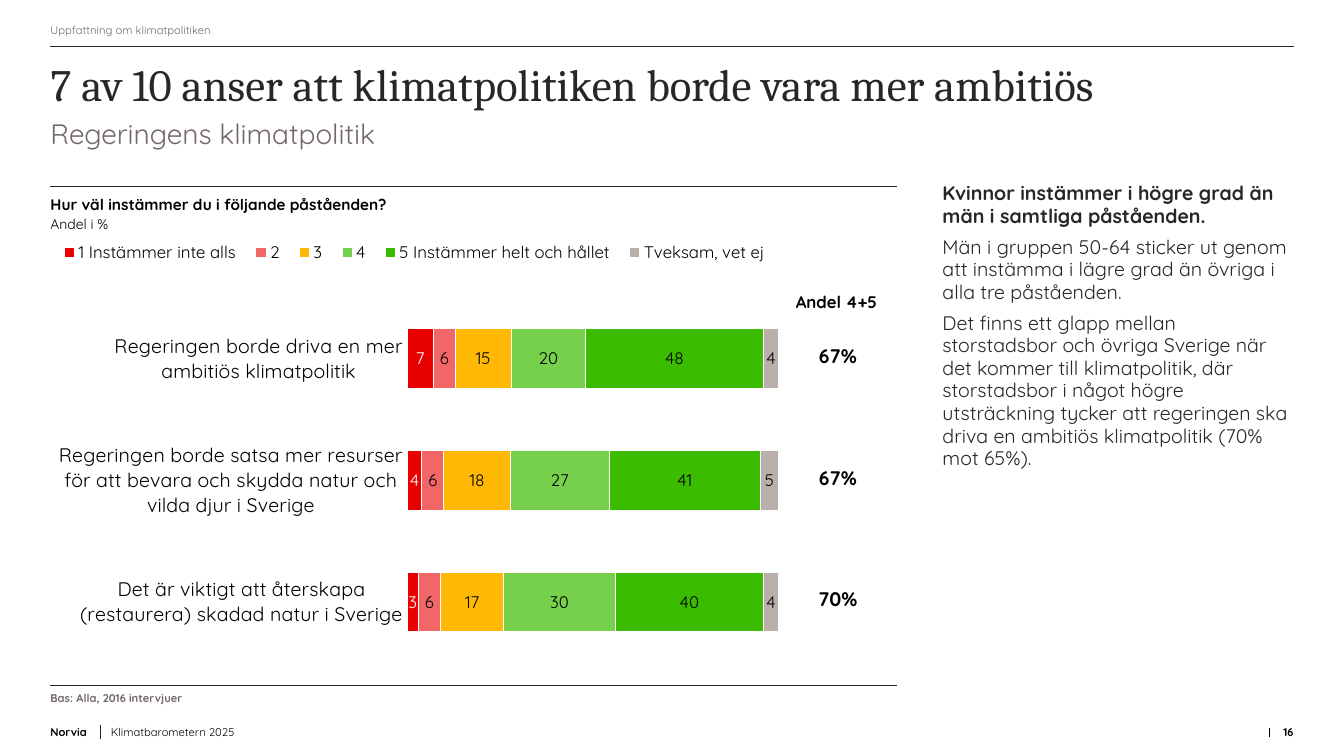
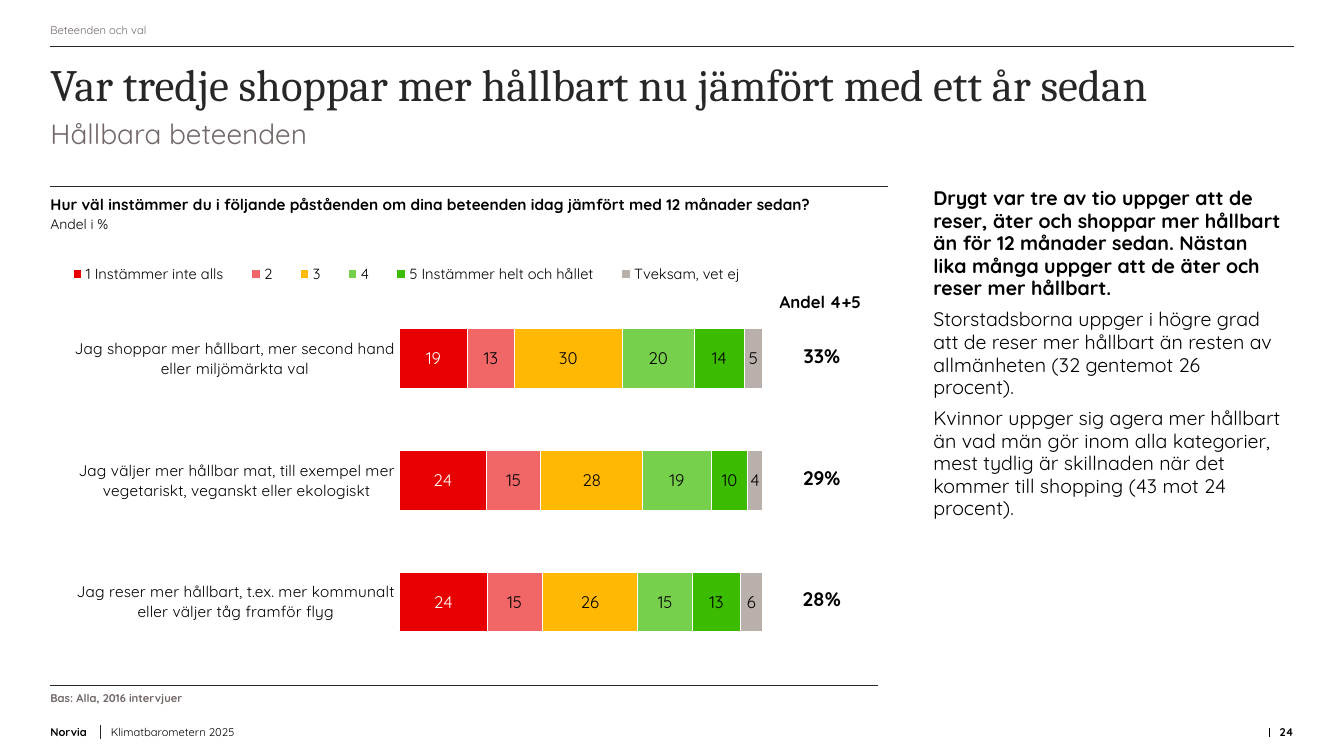
from lxml.etree import SubElement
from pptx import Presentation
from pptx.chart.data import CategoryChartData
from pptx.dml.color import RGBColor
from pptx.enum.chart import XL_CHART_TYPE, XL_LEGEND_POSITION, XL_TICK_MARK
from pptx.enum.shapes import MSO_CONNECTOR
from pptx.enum.text import MSO_ANCHOR, MSO_AUTO_SIZE, PP_ALIGN
from pptx.oxml.ns import qn
from pptx.util import Pt

BLACK = RGBColor(0x00, 0x00, 0x00)
WHITE = RGBColor(0xFF, 0xFF, 0xFF)
CHARCOAL = RGBColor(0x28, 0x26, 0x26)
GREY = RGBColor(0x73, 0x68, 0x68)
RED = RGBColor(0xE8, 0x00, 0x00)
PINK = RGBColor(0xF1, 0x66, 0x66)
YELLOW = RGBColor(0xFF, 0xB9, 0x05)
LIGHT_GREEN = RGBColor(0x76, 0xD0, 0x4C)
GREEN = RGBColor(0x3C, 0xBC, 0x00)
STONE = RGBColor(0xBA, 0xB0, 0xAB)

TITLE_FONT = "Cambria"
TEXT_FONT = "Quicksand"
NUMBER_FORMAT = "0"

# Answer name, bar colour, label colour
ANSWERS = [
    ("1 Instämmer inte alls", RED, WHITE),
    ("2", PINK, BLACK),
    ("3", YELLOW, BLACK),
    ("4", LIGHT_GREEN, BLACK),
    ("5 Instämmer helt och hållet", GREEN, BLACK),
    ("Tveksam, vet ej", STONE, BLACK),
]

LEFT = 36
RIGHT = 924
CONTENT_WIDTH = RIGHT - LEFT
CHART_TOP = 167.8
CHART_HEIGHT = 310.3
SHARE_TOP = 245.5
SHARE_STEP = 87
SHARE_WIDTH = 82


def style_font(font, size, color, bold=False, name=TEXT_FONT):
    font.name = name
    font.size = Pt(size)
    font.bold = bold
    font.color.rgb = color


def set_layout(element, index, **fractions):
    """Place a chart part by fractions of the chart area."""
    for old_layout in element.findall(qn("c:layout")):
        element.remove(old_layout)
    layout = element.makeelement(qn("c:layout"))
    element.insert(index, layout)
    manual = SubElement(layout, qn("c:manualLayout"))
    if element.tag == qn("c:plotArea"):
        SubElement(manual, qn("c:layoutTarget")).set("val", "inner")
    for axis in "xy":
        SubElement(manual, qn(f"c:{axis}Mode")).set("val", "edge")
    for key in "xywh":
        SubElement(manual, qn(f"c:{key}")).set("val", str(fractions[key]))


class SurveyDeck:
    def __init__(self):
        self.presentation = Presentation()
        self.presentation.slide_width = Pt(960)
        self.presentation.slide_height = Pt(540)
        self.slide = None

    def add_slide(self, section, title, subtitle, page):
        """Start a slide with its heading, rules and footer."""
        layout = self.presentation.slide_layouts[3]
        self.slide = self.presentation.slides.add_slide(layout)
        self.add_line(LEFT, 33.1, RIGHT, 33.1)
        self.add_line(72, 517.7, 72, 527.8)
        self.add_line(906.5, 519.8, 906.5, 526.3, BLACK)
        self.add_text([section], LEFT, 13.7, CONTENT_WIDTH, 15, 8, GREY,
                      anchor=MSO_ANCHOR.MIDDLE)
        footer = {"size": 8, "anchor": MSO_ANCHOR.BOTTOM}
        self.add_text(["Norvia"], LEFT, 515.5, 36, 12.2, bold=True, **footer)
        self.add_text(["Klimatbarometern 2025"], 79.2, 515.5, 560, 12.2, **footer)
        self.add_text([page], 906.5, 515.5, 17.5, 12.2, bold=True,
                      align=PP_ALIGN.RIGHT, **footer)
        self.fill_placeholder(0, [title], LEFT, 33.1, CONTENT_WIDTH, 51, 32,
                              CHARCOAL, name=TITLE_FONT, top_inset=7.2)
        self.fill_placeholder(1, [subtitle], LEFT, 83.5, CONTENT_WIDTH, 33, 20, GREY)

    def add_line(self, x1, y1, x2, y2, color=CHARCOAL):
        line = self.slide.shapes.add_connector(
            MSO_CONNECTOR.STRAIGHT, Pt(x1), Pt(y1), Pt(x2), Pt(y2))
        line.line.color.rgb = color
        line.line.width = Pt(0.5)
        SubElement(line._element.spPr, qn("a:effectLst"))

    def add_text(self, texts, left, top, width, height, size, color=BLACK, **style):
        shape = self.slide.shapes.add_textbox(Pt(left), Pt(top), Pt(width), Pt(height))
        self.set_text(shape, texts, size, color, **style)

    def fill_placeholder(self, index, texts, left, top, width, height, size, color,
                         **style):
        shape = self.slide.placeholders[index]
        shape.left, shape.top = Pt(left), Pt(top)
        shape.width, shape.height = Pt(width), Pt(height)
        self.set_text(shape, texts, size, color, **style)
        for paragraph in shape.text_frame.paragraphs:
            properties = paragraph._p.get_or_add_pPr()
            properties.set("marL", "0")
            properties.set("indent", "0")
            SubElement(properties, qn("a:buNone"))

    def set_text(self, shape, texts, size, color, bold=False, name=TEXT_FONT,
                 align=PP_ALIGN.LEFT, anchor=MSO_ANCHOR.TOP, top_inset=0,
                 space_after=0, line_spacing=1.0):
        frame = shape.text_frame
        frame.text = "\n".join(texts)
        frame.word_wrap = True
        frame.auto_size = MSO_AUTO_SIZE.NONE
        frame.vertical_anchor = anchor
        frame.margin_left = frame.margin_right = frame.margin_bottom = 0
        frame.margin_top = Pt(top_inset)
        for paragraph in frame.paragraphs:
            paragraph.alignment = align
            paragraph.space_before = Pt(0)
            paragraph.space_after = Pt(space_after)
            paragraph.line_spacing = line_spacing
            style_font(paragraph.font, size, color, bold, name)

    def add_commentary(self, texts, left, top, width, color):
        """Fill the side column; its first paragraph is bold."""
        self.fill_placeholder(2, texts, left, top, width, 370, 14, color,
                              space_after=6, line_spacing=0.96)
        self.slide.placeholders[2].text_frame.paragraphs[0].font.bold = True

    def add_question(self, question, top_rule_end, bottom_rule_end):
        """Frame the chart with rules, its question and the base."""
        self.add_line(LEFT, 133.2, top_rule_end, 133.2)
        self.add_line(LEFT, 489.6, bottom_rule_end, 489.6)
        self.add_text([question], LEFT, 139, 567, 15, 11, bold=True)
        self.add_text(["Andel i %"], LEFT, 154.1, 373, 11, 10)
        self.add_text(["Bas: Alla, 2016 intervjuer"], LEFT, 493.9, 586, 11, 8,
                      GREY, bold=True)

    def add_answer_chart(self, statements, width, plot_left, category_size,
                         legend_size, legend_top):
        """Draw answers per statement; statements maps text to (values, share)."""
        data = CategoryChartData(number_format=NUMBER_FORMAT)
        data.categories = list(statements)
        rows = [values for values, _ in statements.values()]
        for (answer, _, _), values in zip(ANSWERS, zip(*rows)):
            data.add_series(answer, values)
        chart = self.slide.shapes.add_chart(
            XL_CHART_TYPE.BAR_STACKED_100, Pt(LEFT), Pt(CHART_TOP),
            Pt(width), Pt(CHART_HEIGHT), data).chart
        style_font(chart.font, 10, BLACK)
        chart.has_title = False

        chart.has_legend = True
        legend = chart.legend
        legend.position = XL_LEGEND_POSITION.TOP
        legend.include_in_layout = False
        style_font(legend.font, legend_size, BLACK)
        set_layout(legend._element, 1, x=0, y=legend_top, w=1, h=0.08)
        plot_area = chart._chartSpace.chart.plotArea
        set_layout(plot_area, 0, x=plot_left, y=0.145,
                   w=round(1 - plot_left, 2), h=0.84)

        category_axis = chart.category_axis
        category_axis.reverse_order = True
        category_axis.major_tick_mark = XL_TICK_MARK.NONE
        category_axis.format.line.fill.background()
        style_font(category_axis.tick_labels.font, category_size, BLACK)
        chart.value_axis.has_major_gridlines = False
        chart.value_axis.visible = False

        plot = chart.plots[0]
        plot.gap_width = 104
        plot.overlap = 100
        plot.vary_by_categories = False
        for series, (_, bar_color, label_color) in zip(plot.series, ANSWERS):
            series.invert_if_negative = False
            series.format.fill.solid()
            series.format.fill.fore_color.rgb = bar_color
            series.format.line.color.rgb = WHITE
            series.format.line.width = Pt(0.75)
            labels = series.data_labels
            labels.show_value = True
            labels.number_format = NUMBER_FORMAT
            labels.number_format_is_linked = False
            style_font(labels.font, 12, label_color)
        self.add_shares([share for _, share in statements.values()], LEFT + width)

    def add_shares(self, shares, left):
        """Put the sum of answers 4 and 5 beside each bar."""
        style = {"bold": True, "align": PP_ALIGN.CENTER}
        self.add_text(["Andel 4+5"], left, 208.7, SHARE_WIDTH, 18, 12, **style)
        for row, share in enumerate(shares):
            self.add_text([share], left + 1, SHARE_TOP + row * SHARE_STEP,
                          SHARE_WIDTH, 33, 14, **style)


def main():
    deck = SurveyDeck()

    deck.add_slide("Uppfattning om klimatpolitiken",
                   "7 av 10 anser att klimatpolitiken borde vara mer ambitiös",
                   "Regeringens klimatpolitik", "16")
    deck.add_question("Hur väl instämmer du i följande påståenden?", 641, 641)
    deck.add_answer_chart({
        "Regeringen borde driva en mer ambitiös klimatpolitik":
            ((7, 6, 15, 20, 48, 4), "67%"),
        "Regeringen borde satsa mer resurser för att bevara och skydda natur "
        "och vilda djur i Sverige":
            ((4, 6, 18, 27, 41, 5), "67%"),
        "Det är viktigt att återskapa (restaurera) skadad natur i Sverige":
            ((3, 6, 17, 30, 40, 4), "70%"),
    }, width=520.5, plot_left=0.49, category_size=14, legend_size=12, legend_top=0)
    deck.add_commentary([
        "Kvinnor instämmer i högre grad än män i samtliga påståenden.",
        "Män i gruppen 50-64 sticker ut genom att instämma i lägre grad än "
        "övriga i alla tre påståenden.",
        "Det finns ett glapp mellan storstadsbor och övriga Sverige när det "
        "kommer till klimatpolitik, där storstadsbor i något högre utsträckning "
        "tycker att regeringen ska driva en ambitiös klimatpolitik (70% mot 65%).",
    ], 673.2, 130.3, 250.6, CHARCOAL)

    deck.add_slide("Beteenden och val",
                   "Var tredje shoppar mer hållbart nu jämfört med ett år sedan",
                   "Hållbara beteenden", "24")
    deck.add_question("Hur väl instämmer du i följande påståenden om dina beteenden "
                      "idag jämfört med 12 månader sedan?", 634, 627)
    deck.add_answer_chart({
        "Jag shoppar mer hållbart, mer second hand eller miljömärkta val":
            ((19, 13, 30, 20, 14, 5), "33%"),
        "Jag väljer mer hållbar mat, till exempel mer vegetariskt, veganskt "
        "eller ekologiskt":
            ((24, 15, 28, 19, 10, 4), "29%"),
        "Jag reser mer hållbart, t.ex. mer kommunalt eller väljer tåg framför flyg":
            ((24, 15, 26, 15, 13, 6), "28%"),
    }, width=509, plot_left=0.49, category_size=11, legend_size=10.5, legend_top=0.05)
    deck.add_commentary([
        "Drygt var tre av tio uppger att de reser, äter och shoppar mer hållbart "
        "än för 12 månader sedan. Nästan lika många uppger att de äter och reser "
        "mer hållbart.",
        "Storstadsborna uppger i högre grad att de reser mer hållbart än resten "
        "av allmänheten (32 gentemot 26 procent).",
        "Kvinnor uppger sig agera mer hållbart än vad män gör inom alla "
        "kategorier, mest tydlig är skillnaden när det kommer till shopping "
        "(43 mot 24 procent).",
    ], 666.7, 133.9, 249.1, BLACK)

    deck.presentation.save("out.pptx")


if __name__ == "__main__":
    main()
